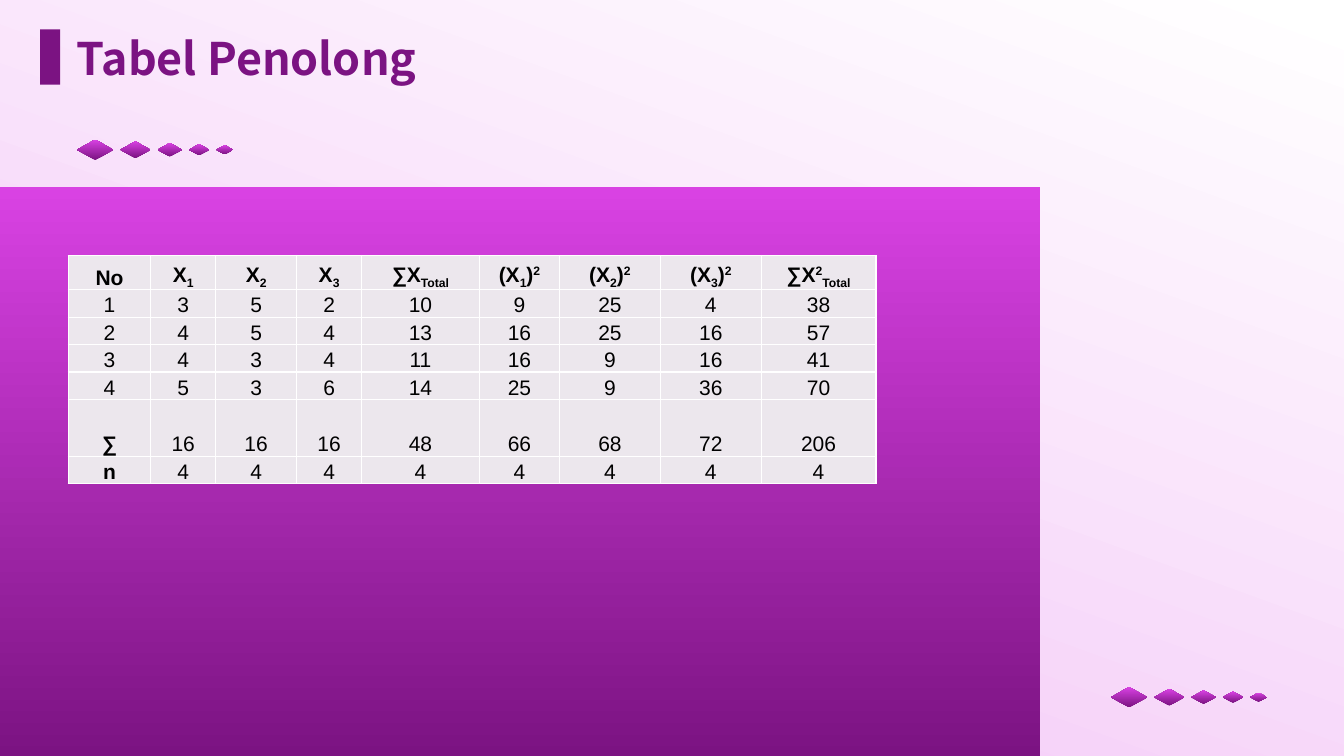
from dataclasses import dataclass

from lxml.etree import SubElement
from pptx import Presentation
from pptx.dml.color import RGBColor
from pptx.enum.shapes import MSO_SHAPE
from pptx.enum.text import MSO_ANCHOR, MSO_AUTO_SIZE, PP_ALIGN
from pptx.oxml.ns import qn
from pptx.util import Pt


@dataclass(frozen=True)
class Theme:
    """Colours, fonts and type sizes of the slide."""
    dark: str = "7B1382"
    bright: str = "D942E3"
    pale: str = "F2C0F6"
    white: str = "FFFFFF"
    cell: str = "ECE7ED"
    ink: str = "000000"
    title_font: str = "Noto Sans CJK SC"
    table_font: str = "Arial"
    title_size: float = 32
    table_size: float = 15


THEME = Theme()
SUB, SUP = -25, 30
X_LABELS = [[("X", 0), (n, SUB)] for n in "123"]
SQUARE_LABELS = [[("(X", 0), (n, SUB), (")", 0), ("2", SUP)] for n in "123"]
HEADERS = [
    [("No", 0)],
    *X_LABELS,
    [("∑X", 0), ("Total", SUB)],
    *SQUARE_LABELS,
    [("∑X", 0), ("2", SUP), ("Total", SUB)],
]
BODY = [
    ("1", 3, 5, 2, 10, 9, 25, 4, 38),
    ("2", 4, 5, 4, 13, 16, 25, 16, 57),
    ("3", 4, 3, 4, 11, 16, 9, 16, 41),
    ("4", 5, 3, 6, 14, 25, 9, 36, 70),
    ("∑", 16, 16, 16, 48, 66, 68, 72, 206),
    ("n", 4, 4, 4, 4, 4, 4, 4, 4),
]
COL_WIDTHS = (59, 46.25, 58, 46.25, 84.25, 57.25, 72, 72, 82)
ROW_HEIGHTS = (24.5, 19.6, 19.6, 19.6, 19.6, 40.5, 19.6)
DIAMOND_WIDTHS = (26, 21.5, 17.5, 14.5, 12)


def add_block(s, kind, left, top, width, height):
    """Add a preset shape without line or shadow."""
    sp = s.shapes.add_shape(kind, Pt(left), Pt(top), Pt(width), Pt(height))
    sp.shadow.inherit = False
    sp.line.fill.background()
    return sp


def fill_gradient(sp, start, end, angle=90, end_position=1.0):
    """Fill a shape with a linear gradient between two colours."""
    sp.fill.gradient()
    sp.fill.gradient_angle = angle
    first, last = sp.fill.gradient_stops
    first.color.rgb = RGBColor.from_string(start)
    last.color.rgb = RGBColor.from_string(end)
    last.position = end_position


def add_diamonds(s, left, middle):
    """Add a row of shrinking diamonds centred on one height."""
    for width in DIAMOND_WIDTHS:
        height = width * 0.56
        sp = add_block(s, MSO_SHAPE.DIAMOND, left, middle - height / 2, width, height)
        fill_gradient(sp, THEME.dark, THEME.bright)
        left += width + 5


def style_font(font, name, size, color, bold):
    """Set the face, size, colour and weight of a font."""
    font.name = name
    font.size = Pt(size)
    font.bold = bold
    font.color.rgb = RGBColor.from_string(color)


def set_title(s, text):
    """Place the title placeholder in front of the background."""
    sp = s.shapes.title
    sp.element.getparent().append(sp.element)
    sp.left, sp.top, sp.width, sp.height = Pt(55), Pt(24), Pt(838), Pt(34)
    tf = sp.text_frame
    tf.text = text
    tf.word_wrap = True
    tf.auto_size = MSO_AUTO_SIZE.NONE
    tf.vertical_anchor = MSO_ANCHOR.MIDDLE
    tf.margin_left = tf.margin_top = tf.margin_right = tf.margin_bottom = 0
    p = tf.paragraphs[0]
    p.alignment = PP_ALIGN.LEFT
    style_font(p.font, THEME.title_font, THEME.title_size, THEME.dark, True)


def add_borders(cell):
    """Draw a thin white line on each side of a cell."""
    tc_pr = cell._tc.get_or_add_tcPr()
    for side in ("lnL", "lnR", "lnT", "lnB"):
        ln = SubElement(tc_pr, qn(f"a:{side}"), w=str(Pt(1)))
        fill = SubElement(ln, qn("a:solidFill"))
        SubElement(fill, qn("a:srgbClr"), val=THEME.white)


def fill_cell(cell, parts, bold, loose):
    """Write and format the text of one cell, with raised and lowered runs."""
    add_borders(cell)
    cell.fill.solid()
    cell.fill.fore_color.rgb = RGBColor.from_string(THEME.cell)
    cell.vertical_anchor = MSO_ANCHOR.BOTTOM
    cell.margin_left = cell.margin_right = Pt(5 if loose else 0.75)
    cell.margin_top = Pt(0 if loose else 0.75)
    cell.margin_bottom = 0
    p = cell.text_frame.paragraphs[0]
    p.alignment = PP_ALIGN.CENTER
    p.line_spacing = 1.15 if loose else 1.0
    style_font(p.font, THEME.table_font, THEME.table_size, THEME.ink, bold)
    for text, baseline in parts:
        r = p.add_run()
        r.text = text
        if baseline:
            r._r.get_or_add_rPr().set("baseline", str(baseline * 1000))


def add_score_table(s, left, top):
    """Add the table of scores, squares and sums."""
    rows = HEADERS, *([[(str(v), 0)] for v in row] for row in BODY)
    frame = s.shapes.add_table(
        len(rows), len(COL_WIDTHS), Pt(left), Pt(top),
        Pt(sum(COL_WIDTHS)), Pt(sum(ROW_HEIGHTS)))
    table = frame.table
    table.horz_banding = False
    for column, width in zip(table.columns, COL_WIDTHS):
        column.width = Pt(width)
    for i, (row, height) in enumerate(zip(rows, ROW_HEIGHTS)):
        table.rows[i].height = Pt(height)
        is_summary = i > 4
        for j, parts in enumerate(row):
            bold = i == 0 or (is_summary and j == 0)
            loose = i == 0 or j == 0 or (not is_summary and j < 4)
            fill_cell(table.cell(i, j), parts, bold, loose)


def main():
    """Build the slide and save it."""
    prs = Presentation()
    prs.slide_width, prs.slide_height = Pt(960), Pt(540)
    s = prs.slides.add_slide(prs.slide_layouts[5])
    backdrop = add_block(s, MSO_SHAPE.RECTANGLE, 0, 0, 962, 541.5)
    fill_gradient(backdrop, THEME.pale, THEME.white, 70, 0.99)
    panel = add_block(s, MSO_SHAPE.RECTANGLE, 0, 133.5, 743.25, 408)
    fill_gradient(panel, THEME.dark, THEME.bright)
    add_diamonds(s, 55, 107)
    add_diamonds(s, 793.5, 498)
    set_title(s, "Tabel Penolong")
    marker = add_block(s, MSO_SHAPE.RECTANGLE, 28.75, 21, 14.25, 39.5)
    marker.fill.solid()
    marker.fill.fore_color.rgb = RGBColor.from_string(THEME.dark)
    add_score_table(s, 48.75, 182.5)
    prs.save("out.pptx")


if __name__ == "__main__":
    main()
